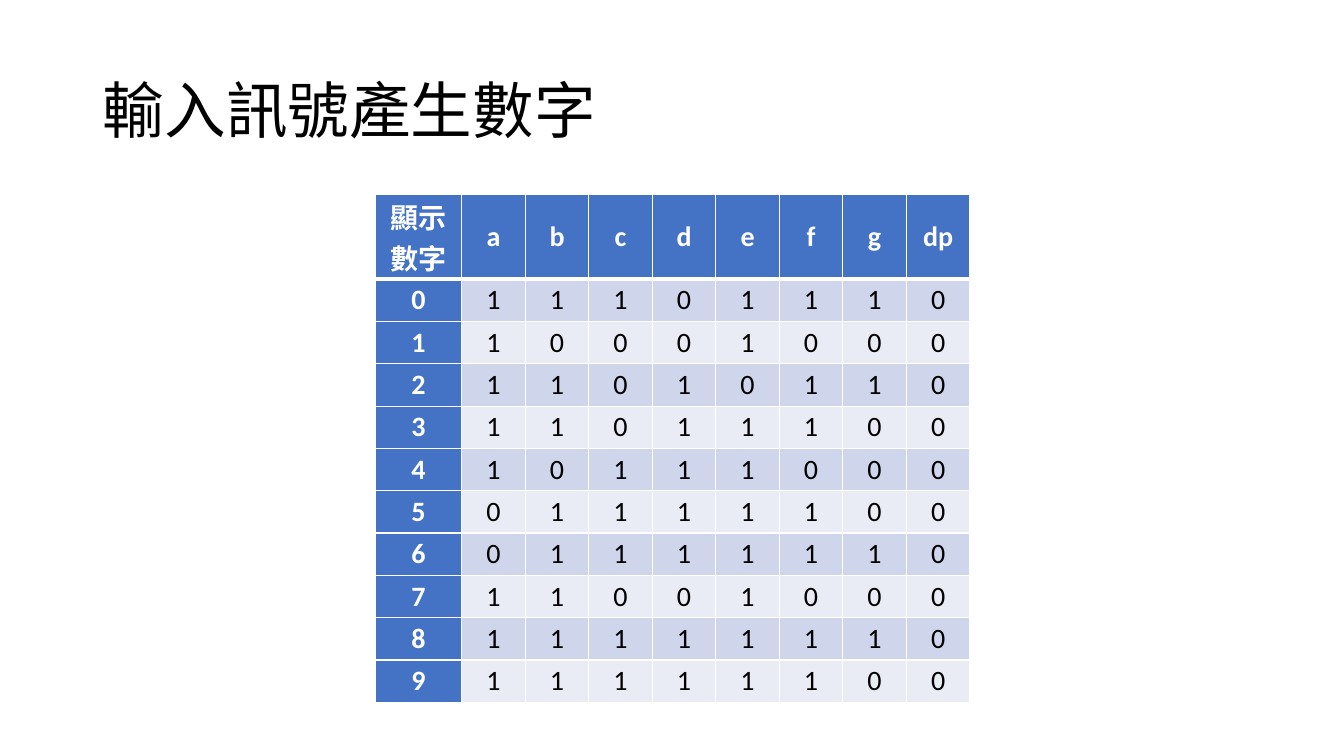
from lxml import etree
from pptx import Presentation
from pptx import util as u
from pptx.dml import color
from pptx.enum import text
from pptx.oxml import ns

COLORS = {
    "title": "000000",
    "header": "4472C4",
    "header_text": "FFFFFF",
    "odd_row": "CFD5EA",
    "even_row": "E9EBF5",
    "digit_text": "000000",
    "border": "FFFFFF",
}
FONT = "Calibri"
SEGMENTS = ["a", "b", "c", "d", "e", "f", "g", "dp"]
SIGNALS = [
    "11101110",
    "10001000",
    "11010110",
    "11011100",
    "10111000",
    "01111100",
    "01111110",
    "11001000",
    "11111110",
    "11111100",
]


def add_run(paragraph, content, size, fill, bold=False):
    run = paragraph.add_run()
    run.text = content
    run.font.name = FONT
    run.font.size = u.Pt(size)
    run.font.bold = bold
    run.font.color.rgb = color.RGBColor.from_string(fill)


def add_title(slide, left, top, width, height):
    title = slide.shapes.title
    title.left, title.top = u.Inches(left), u.Inches(top)
    title.width, title.height = u.Inches(width), u.Inches(height)
    title.text_frame.vertical_anchor = text.MSO_ANCHOR.MIDDLE
    title.text_frame.word_wrap = True
    paragraph = title.text_frame.paragraphs[0]
    paragraph.alignment = text.PP_ALIGN.LEFT
    paragraph.line_spacing = 0.9
    add_run(paragraph, "輸入訊號產生數字", 44, COLORS["title"])


def set_borders(cell, top, bottom):
    properties = cell._tc.get_or_add_tcPr()
    for side, points in (("L", 1), ("R", 1), ("T", top), ("B", bottom)):
        line = etree.SubElement(properties, ns.qn(f"a:ln{side}"), w=str(u.Pt(points)))
        fill = etree.SubElement(line, ns.qn("a:solidFill"))
        etree.SubElement(fill, ns.qn("a:srgbClr"), val=COLORS["border"])


def format_cell(cell, content, row, column):
    is_header = row == 0 or column == 0
    set_borders(cell, 3 if row == 1 else 1, 3 if row == 0 else 1)
    band = "odd_row" if row % 2 else "even_row"
    fill = COLORS["header" if is_header else band]
    cell.fill.solid()
    cell.fill.fore_color.rgb = color.RGBColor.from_string(fill)
    cell.margin_left = cell.margin_right = u.Inches(0.07)
    cell.margin_top = cell.margin_bottom = 0
    cell.vertical_anchor = text.MSO_ANCHOR.MIDDLE
    paragraph = cell.text_frame.paragraphs[0]
    paragraph.alignment = text.PP_ALIGN.CENTER
    font_color = COLORS["header_text" if is_header else "digit_text"]
    add_run(paragraph, content, 20, font_color, is_header)


def add_signal_table(slide, left, top, width, height):
    rows = [["顯示數字", *SEGMENTS]]
    rows += [[str(digit), *signal] for digit, signal in enumerate(SIGNALS)]
    label_width = 0.86
    segment_width = (width - label_width) / len(SEGMENTS)
    row_height = height / (len(rows) + 1)
    table = slide.shapes.add_table(
        len(rows), len(rows[0]),
        u.Inches(left), u.Inches(top), u.Inches(width), u.Inches(height),
    ).table
    table.first_col = True
    for index, column in enumerate(table.columns):
        column.width = u.Inches(segment_width if index else label_width)
    for index, row in enumerate(table.rows):
        row.height = u.Inches(row_height if index else 2 * row_height)
    for row, contents in enumerate(rows):
        for column, content in enumerate(contents):
            format_cell(table.cell(row, column), content, row, column)


def main():
    presentation = Presentation()
    presentation.slide_width = u.Inches(13.33)
    presentation.slide_height = u.Inches(7.5)
    slide = presentation.slides.add_slide(presentation.slide_layouts[5])
    add_title(slide, 0.92, 0.4, 11.5, 1.45)
    add_signal_table(slide, 3.72, 1.93, 5.9, 5.04)
    presentation.save("out.pptx")


if __name__ == "__main__":
    main()
